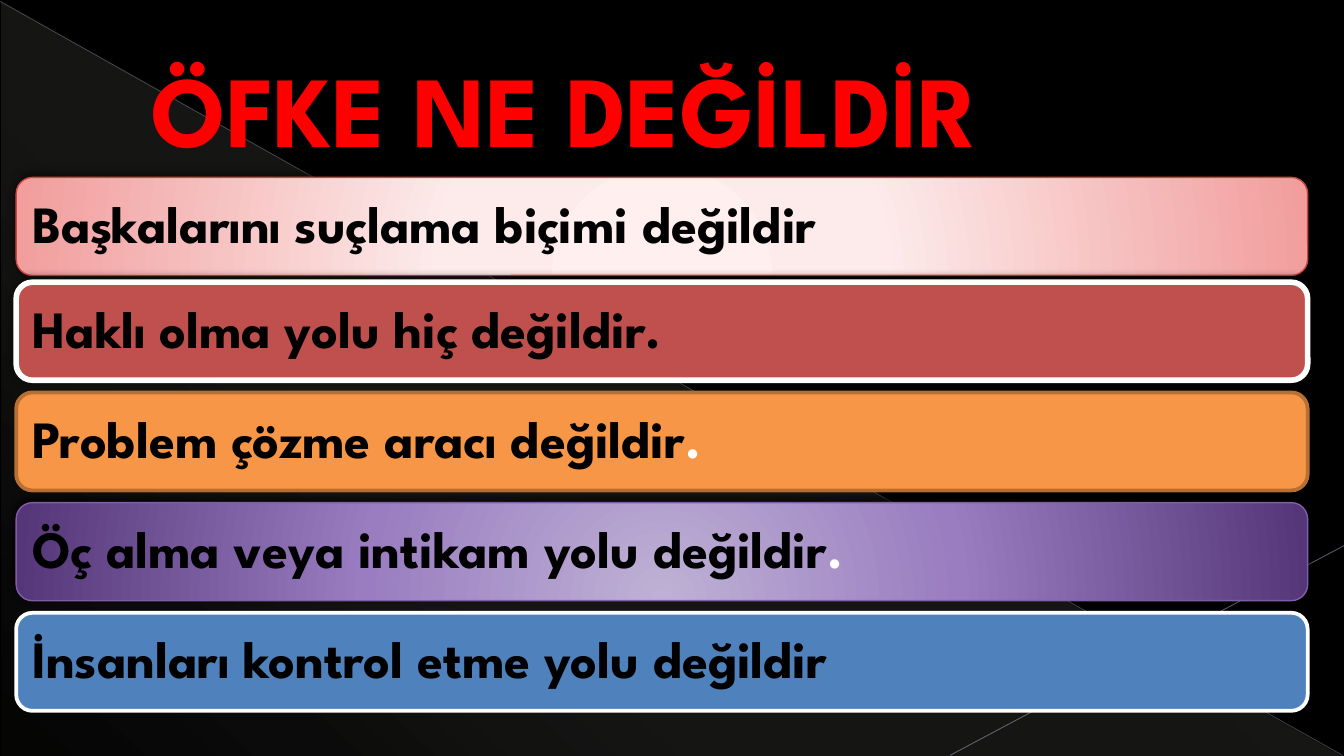
from lxml import etree
from pptx import Presentation
from pptx.dml.color import RGBColor
from pptx.enum.shapes import MSO_CONNECTOR, MSO_SHAPE
from pptx.enum.text import MSO_ANCHOR, PP_ALIGN
from pptx.oxml import parse_xml
from pptx.oxml.ns import nsdecls, qn
from pptx.util import Inches, Pt

TRIANGLE = MSO_SHAPE.RIGHT_TRIANGLE
ROUNDED = MSO_SHAPE.ROUNDED_RECTANGLE
STRAIGHT = MSO_CONNECTOR.STRAIGHT
LEFT = PP_ALIGN.LEFT
MIDDLE = MSO_ANCHOR.MIDDLE

COLORS = {
    "black": "000000", "white": "FFFFFF", "title": "FF0000", "outline": "375983",
    "veil": "EEECE1", "long line": "ADB6CE", "short line": "B6BED3",
    "pink light": "FFEFEF", "pink": "FDEBEB", "pink dark": "F19E9D", "pink edge": "CC4542",
    "red": "C0504D", "orange": "F79646", "orange edge": "B76F34",
    "purple light": "BFB1D5", "purple": "997DC0", "purple dark": "553779",
    "purple edge": "7F5EA8", "blue": "4F81BD",
}
RADIAL = ('<a:path path="circle"><a:fillToRect l="50000" t="155000" r="50000" b="-55000"/>'
          '</a:path>')
DIAGONAL = '<a:lin ang="7980000" scaled="0"/>'
PINK_STOPS = [(0, "pink light", 100), (34, "pink", 100), (100, "pink dark", 100)]
PURPLE_STOPS = [(0, "purple light", 100), (46, "purple", 100), (100, "purple dark", 100)]
VEIL_STOPS = [(0, "veil", 10), (70, "veil", 8), (100, "veil", 1)]

BARS = [
    (1.32, "Başkalarını suçlama biçimi değildir", "", PINK_STOPS, "pink edge", 0.75, (50, 5, 2)),
    (2.10, "Haklı olma yolu hiç değildir.", "", "red", "white", 3, (50, 5, 2)),
    (2.92, "Problem çözme aracı değildir", ".", "orange", "orange edge", 2, None),
    (3.74, "Öç alma veya intikam yolu değildir", ".", PURPLE_STOPS, "purple edge", 0.75,
     (60, 4, 3)),
    (4.56, "İnsanları kontrol etme yolu değildir", "", "blue", "white", 2, None),
]


def rgb(name):
    return RGBColor.from_string(COLORS[name])


def color_xml(name, opacity):
    return (f'<a:srgbClr val="{COLORS[name]}"><a:alpha val="{opacity * 1000}"/></a:srgbClr>')


class SlideBuilder:
    font = "League Spartan"

    def __init__(self, slide):
        self.slide = slide
        slide.background.fill.solid()
        slide.background.fill.fore_color.rgb = rgb("black")

    def style_run(self, run, size, color):
        run.font.name = self.font
        run.font.size = Pt(size)
        run.font.bold = True
        run.font.color.rgb = rgb(color)

    def gradient(self, shape, stops, direction):
        shape.fill.background()
        stop_xml = "".join(f'<a:gs pos="{position * 1000}">{color_xml(color, opacity)}</a:gs>'
                           for position, color, opacity in stops)
        properties = shape._element.spPr
        properties.replace(properties.find(qn("a:noFill")), parse_xml(
            f'<a:gradFill {nsdecls("a")} rotWithShape="1"><a:gsLst>{stop_xml}</a:gsLst>'
            f'{direction}</a:gradFill>'))

    def veil(self):
        shape = self.slide.shapes.add_shape(
            TRIANGLE, Inches(0.01), Inches(0.01), Inches(9.98), Inches(5.61))
        shape.shadow.inherit = False
        shape.line.fill.background()
        self.gradient(shape, VEIL_STOPS, DIAGONAL)

    def line(self, start, end, color, width, opacity):
        connector = self.slide.shapes.add_connector(
            STRAIGHT, *(Inches(value) for value in start + end))
        connector.line.width = Pt(width)
        connector.line.color.rgb = rgb(color)
        properties = connector._element.spPr
        color_element = properties.find(".//" + qn("a:srgbClr"))
        etree.SubElement(color_element, qn("a:alpha")).set("val", str(opacity * 1000))
        etree.SubElement(properties, qn("a:effectLst"))

    def title(self, text):
        title = self.slide.shapes.title
        title.left, title.top = Inches(0.5), Inches(0.22)
        title.width, title.height = Inches(9), Inches(1.15)
        title._element.getparent().append(title._element)
        title.text_frame.text = text
        title.text_frame.vertical_anchor = MIDDLE
        paragraph = title.text_frame.paragraphs[0]
        paragraph.alignment = LEFT
        paragraph_properties = paragraph._p.get_or_add_pPr()
        paragraph_properties.set("marL", str(Inches(0.53)))
        paragraph_properties.set("indent", "0")
        run = paragraph.runs[0]
        self.style_run(run, 54, "title")
        run.font._element.insert(0, parse_xml(
            f'<a:ln {nsdecls("a")} w="{Pt(0.5)}"><a:solidFill>'
            f'{color_xml("outline", 100)}</a:solidFill></a:ln>'))

    def bar(self, top, fill, edge, width, shadow):
        shape = self.slide.shapes.add_shape(
            ROUNDED, Inches(0.12), Inches(top), Inches(9.61), Inches(0.73))
        if isinstance(fill, str):
            shape.fill.solid()
            shape.fill.fore_color.rgb = rgb(fill)
        else:
            self.gradient(shape, fill, RADIAL)
        shape.line.color.rgb = rgb(edge)
        shape.line.width = Pt(width)
        shape.shadow.inherit = False
        if shadow:
            opacity, blur, distance = shadow
            shape._element.spPr.find(qn("a:effectLst")).append(parse_xml(
                f'<a:outerShdw {nsdecls("a")} blurRad="{Pt(blur)}" dist="{Pt(distance)}" '
                f'dir="14700000" rotWithShape="0">{color_xml("black", opacity)}</a:outerShdw>'))

    def label(self, top, text, ending):
        box = self.slide.shapes.add_textbox(
            Inches(0.12), Inches(top), Inches(9.61), Inches(0.73))
        frame = box.text_frame
        frame.word_wrap = True
        frame.vertical_anchor = MIDDLE
        frame.margin_left = frame.margin_right = Inches(0.12)
        frame.margin_top = frame.margin_bottom = Inches(0.12)
        frame.text = text
        paragraph = frame.paragraphs[0]
        paragraph.alignment = LEFT
        paragraph.line_spacing = 0.9
        paragraph.space_after = Pt(9.8)
        if ending:
            paragraph.add_run().text = ending
        for run, color in zip(paragraph.runs, ("black", "white")):
            self.style_run(run, 28, color)
            run.font._element.set("kern", "1200")


def main():
    presentation = Presentation()
    presentation.slide_width = Inches(10)
    presentation.slide_height = presentation.slide_width * 9 // 16
    builder = SlideBuilder(presentation.slides.add_slide(presentation.slide_layouts[5]))
    builder.veil()
    builder.line((0, 0.01), (9.99, 5.62), "long line", 0.39, 35)
    builder.line((10, 4.06), (7.07, 5.62), "short line", 0.47, 45)
    builder.title("ÖFKE NE DEĞİLDİR")
    for top, text, ending, fill, edge, width, shadow in BARS:
        builder.bar(top, fill, edge, width, shadow)
        builder.label(top, text, ending)
    presentation.save("out.pptx")


if __name__ == "__main__":
    main()
